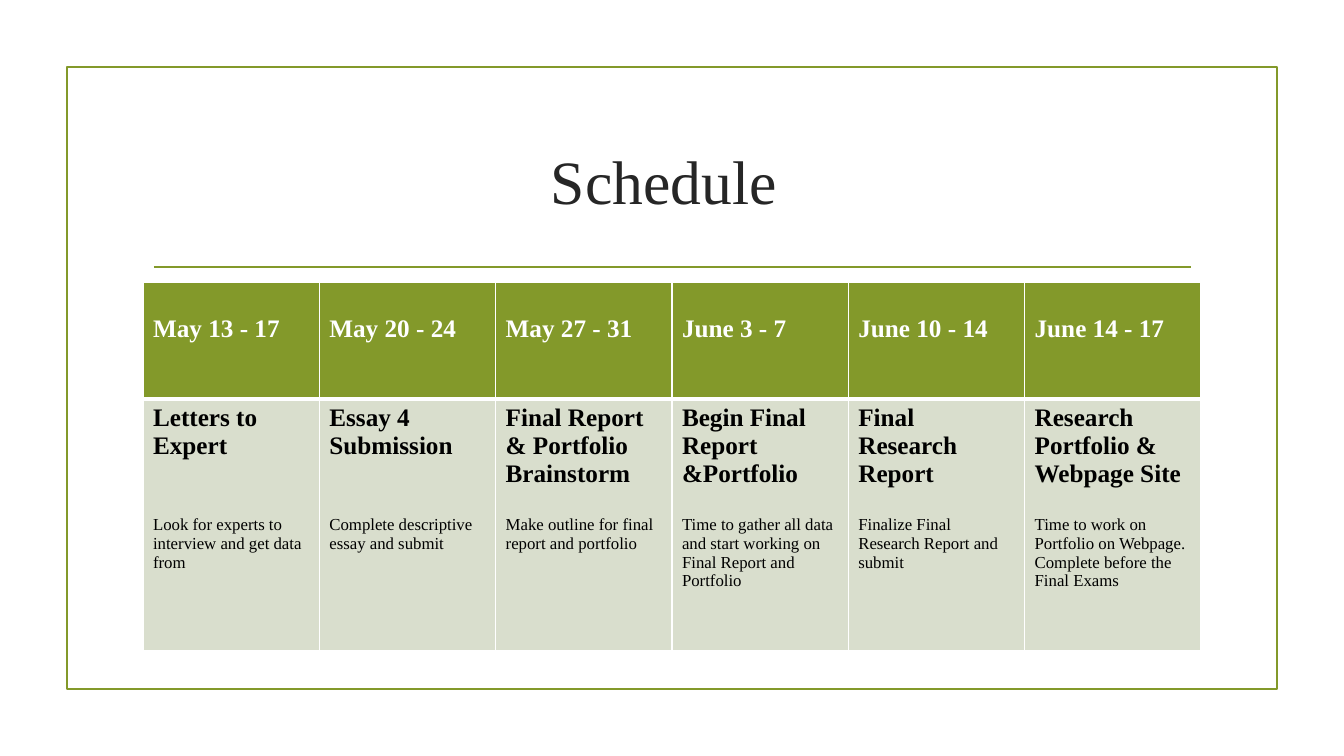
from lxml.etree import SubElement
from pptx import Presentation
from pptx.dml.color import RGBColor
from pptx.enum.shapes import MSO_CONNECTOR, MSO_SHAPE
from pptx.enum.text import MSO_ANCHOR, PP_ALIGN
from pptx.oxml.ns import qn
from pptx.util import Pt

GREEN = RGBColor(0x83, 0x99, 0x2A)
PALE = RGBColor(0xD9, 0xDE, 0xCD)
INK = RGBColor(0x26, 0x26, 0x26)
BLACK = RGBColor(0, 0, 0)
WHITE = RGBColor(0xFF, 0xFF, 0xFF)

FONT = "Times New Roman"
EMU_PER_PX = 914400 / 100.8
LINE_PT = 20  # height of one line of heading text

# dates, heading, blank lines below the heading, task
WEEKS = [
    ("May 13 - 17", "Letters to Expert", 2,
     "Look for experts to interview and get data from"),
    ("May 20 - 24", "Essay 4 Submission", 2,
     "Complete descriptive essay and submit"),
    ("May 27 - 31", "Final Report & Portfolio Brainstorm", 1,
     "Make outline for final report and portfolio"),
    ("June 3 - 7", "Begin Final Report &Portfolio", 1,
     "Time to gather all data and start working on Final Report and Portfolio"),
    ("June 10 - 14", "Final Research Report", 1,
     "Finalize Final Research Report and submit"),
    ("June 14 - 17", "Research Portfolio & Webpage Site", 1,
     "Time to work on Portfolio on Webpage. Complete before the Final Exams"),
]


def px(n):
    return round(n * EMU_PER_PX)


def write(p, text, size=18, color=BLACK, bold=False, align=PP_ALIGN.LEFT, before=0):
    p.alignment = align
    if before:
        p.space_before = Pt(before)
    r = p.add_run()
    r.text = text
    r.font.name = FONT
    r.font.size = Pt(size)
    r.font.bold = bold
    r.font.color.rgb = color


def set_borders(cell, **widths):
    """Draw white cell borders; widths in points by side: L, R, T, B."""
    tcPr = cell._tc.get_or_add_tcPr()
    for side, width in widths.items():
        ln = SubElement(tcPr, qn(f"a:ln{side}"), w=str(Pt(width)))
        fill = SubElement(ln, qn("a:solidFill"))
        SubElement(fill, qn("a:srgbClr"), val=str(WHITE))


class Slide:
    def __init__(self, prs):
        self.slide = prs.slides.add_slide(prs.slide_layouts[6])
        self.shapes = self.slide.shapes

    def frame(self, x, y, w, h):
        sp = self.shapes.add_shape(MSO_SHAPE.RECTANGLE, px(x), px(y), px(w), px(h))
        sp.shadow.inherit = False
        sp.fill.background()
        sp.line.color.rgb = GREEN
        sp.line.width = Pt(1.25)

    def rule(self, x1, x2, y):
        line = self.shapes.add_connector(
            MSO_CONNECTOR.STRAIGHT, px(x1), px(y), px(x2), px(y))
        line.line.color.rgb = GREEN
        line.line.width = Pt(1.25)
        SubElement(line._element.spPr, qn("a:effectLst"))

    def title(self, text, x, y, w, h):
        tf = self.shapes.add_textbox(px(x), px(y), px(w), px(h)).text_frame
        tf.word_wrap = True
        tf.vertical_anchor = MSO_ANCHOR.MIDDLE
        tf.margin_right = px(26)
        write(tf.paragraphs[0], text, size=44, color=INK, align=PP_ALIGN.CENTER)

    def schedule(self, weeks, x, y, w, row_heights):
        table = self.shapes.add_table(
            len(row_heights), len(weeks), px(x), px(y), px(w),
            px(sum(row_heights))).table
        table.horz_banding = False
        for row, height in zip(table.rows, row_heights):
            row.height = px(height)
        for col, (dates, heading, gap, task) in enumerate(weeks):
            head = self.cell(table.cell(0, col), GREEN, bottom=3)
            head.margin_top = px(33)
            write(head.text_frame.paragraphs[0], dates, color=WHITE, bold=True)

            tf = self.cell(table.cell(1, col), PALE, top=3).text_frame
            write(tf.paragraphs[0], heading, bold=True)
            write(tf.add_paragraph(), task, size=12, before=gap * LINE_PT)

    def cell(self, cell, color, top=1, bottom=1):
        set_borders(cell, L=1, R=1, T=top, B=bottom)
        cell.fill.solid()
        cell.fill.fore_color.rgb = color
        cell.vertical_anchor = MSO_ANCHOR.TOP
        return cell


def main():
    prs = Presentation()
    prs.slide_width, prs.slide_height = px(1344), px(756)
    s = Slide(prs)
    s.frame(67, 67, 1210, 622)
    s.rule(154, 1191, 267)
    s.title("Schedule", 143, 108, 1058, 144)
    s.schedule(WEEKS, 143, 282, 1058, row_heights=(117, 252))
    prs.save("out.pptx")


if __name__ == "__main__":
    main()
